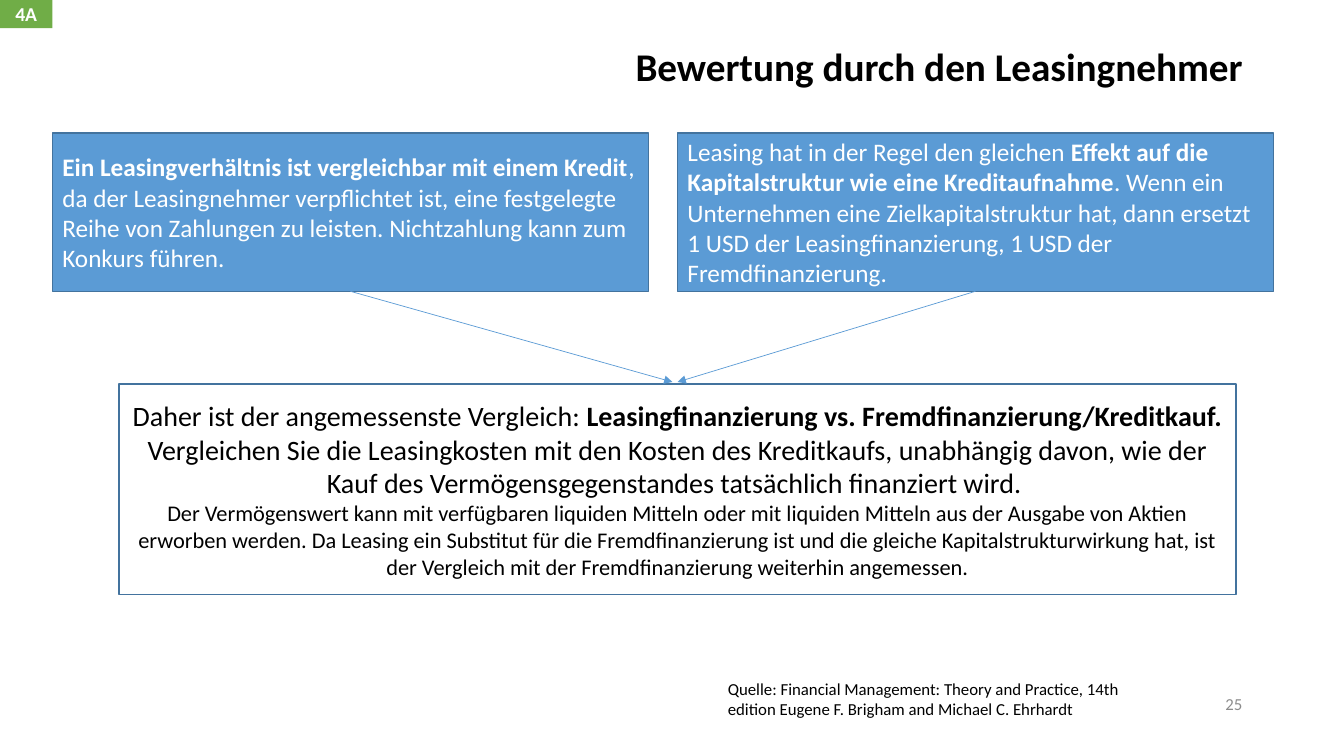
from lxml.etree import SubElement
from pptx import Presentation
from pptx.dml.color import RGBColor
from pptx.enum.shapes import MSO_CONNECTOR, MSO_SHAPE
from pptx.enum.text import MSO_ANCHOR, PP_ALIGN
from pptx.oxml.ns import qn
from pptx.util import Inches, Pt

BLACK = RGBColor(0x00, 0x00, 0x00)
WHITE = RGBColor(0xFF, 0xFF, 0xFF)
GRAY = RGBColor(0x8C, 0x8C, 0x8C)
GREEN = RGBColor(0x70, 0xAD, 0x47)
BLUE = RGBColor(0x5B, 0x9B, 0xD5)
DARK_BLUE = RGBColor(0x43, 0x73, 0x9E)

TITLE = [(28, [("Bewertung durch den Leasingnehmer", True)])]
CHAPTER = [(14, [("4A", True)])]
PAGE_NUMBER = [(12, [("25", False)])]
SOURCE = [(12, [("Quelle: Financial Management: Theory and Practice, 14th edition "
                 "Eugene F. Brigham and Michael C. Ehrhardt", False)])]
PREMISES = [
    [(18, [
        ("Ein Leasingverhältnis ist vergleichbar mit einem Kredit", True),
        (", da der Leasingnehmer verpflichtet ist, eine festgelegte Reihe von "
         "Zahlungen zu leisten. Nichtzahlung kann zum Konkurs führen.", False),
    ])],
    [(18, [
        ("Leasing hat in der Regel den gleichen ", False),
        ("Effekt auf die Kapitalstruktur wie eine Kreditaufnahme", True),
        (". Wenn ein Unternehmen eine Zielkapitalstruktur hat, dann ersetzt "
         "1 USD der Leasingfinanzierung, 1 USD der Fremdfinanzierung.", False),
    ])],
]
CONCLUSION = [
    (20, [
        ("Daher ist der angemessenste Vergleich: ", False),
        ("Leasingfinanzierung vs. Fremdfinanzierung/Kreditkauf. ", True),
        ("Vergleichen Sie die Leasingkosten mit den Kosten des Kreditkaufs, "
         "unabhängig davon, wie der Kauf des Vermögensgegenstandes tatsächlich "
         "finanziert wird. ", False),
    ]),
    (16, [
        ("Der Vermögenswert kann mit verfügbaren liquiden Mitteln oder mit liquiden "
         "Mitteln aus der Ausgabe von Aktien erworben werden. Da Leasing ein Substitut "
         "für die Fremdfinanzierung ist und die gleiche Kapitalstrukturwirkung hat, ist "
         "der Vergleich mit der Fremdfinanzierung weiterhin angemessen.", False),
    ]),
]

PREMISE_LEFT, PREMISE_TOP, PREMISE_WIDTH, PREMISE_HEIGHT = 0.52, 1.32, 5.91, 1.57
PREMISE_STEP = 6.2
ARROW_TIPS = [(6.67, 3.79), (6.72, 3.79)]


def write(target, paragraphs, color, align, anchor=MSO_ANCHOR.MIDDLE, spacing=1.0):
    frame = target.text_frame
    frame.word_wrap = True
    frame.vertical_anchor = anchor
    for index, (size, runs) in enumerate(paragraphs):
        paragraph = frame.add_paragraph() if index else frame.paragraphs[0]
        paragraph.alignment = align
        paragraph.line_spacing = spacing
        for words, bold in runs:
            run = paragraph.add_run()
            run.text = words
            run.font.color.rgb = color
            style = {"name": "Calibri", "size": Pt(size), "bold": bold}
            for attribute, value in style.items():
                setattr(run.font, attribute, value)


def add_label(slide, place, paragraphs, color, align, **layout):
    label = slide.shapes.add_textbox(*map(Inches, place))
    write(label, paragraphs, color, align, **layout)


def add_panel(slide, place, paragraphs, fill, border, color, align):
    panel = slide.shapes.add_shape(MSO_SHAPE.RECTANGLE, *map(Inches, place))
    panel.shadow.inherit = False
    panel.fill.solid()
    panel.fill.fore_color.rgb = fill
    if border is None:
        panel.line.fill.background()
    else:
        panel.line.color.rgb = border
        panel.line.width = Pt(1)
    write(panel, paragraphs, color, align)
    return panel


def add_arrow(slide, premise, tip):
    arrow = slide.shapes.add_connector(MSO_CONNECTOR.STRAIGHT, 0, 0, *map(Inches, tip))
    arrow.begin_connect(premise, 2)
    arrow.line.color.rgb = BLUE
    arrow.line.width = Pt(0.5)
    SubElement(arrow.line._get_or_add_ln(), qn("a:tailEnd"), type="triangle")
    SubElement(arrow._element.spPr, qn("a:effectLst"))


def main():
    deck = Presentation()
    deck.slide_width, deck.slide_height = Inches(13.33), Inches(7.5)
    slide = deck.slides.add_slide(deck.slide_layouts[6])

    add_label(slide, (0.92, 0.4, 11.5, 0.57), TITLE, BLACK, PP_ALIGN.RIGHT, spacing=0.9)
    add_panel(slide, (0, 0, 0.52, 0.28), CHAPTER, GREEN, None, WHITE, PP_ALIGN.CENTER)
    add_panel(slide, (1.18, 3.81, 11.08, 2.09), CONCLUSION,
              WHITE, DARK_BLUE, BLACK, PP_ALIGN.CENTER)

    for index, (premise_text, tip) in enumerate(zip(PREMISES, ARROW_TIPS)):
        place = (PREMISE_LEFT + index * PREMISE_STEP, PREMISE_TOP,
                 PREMISE_WIDTH, PREMISE_HEIGHT)
        premise = add_panel(slide, place, premise_text,
                            BLUE, DARK_BLUE, WHITE, PP_ALIGN.LEFT)
        add_arrow(slide, premise, tip)

    add_label(slide, (9.42, 6.78, 3, 0.4), PAGE_NUMBER, GRAY, PP_ALIGN.RIGHT)
    add_label(slide, (7.12, 6.68, 4.22, 0.5), SOURCE, BLACK, PP_ALIGN.LEFT,
              anchor=MSO_ANCHOR.TOP)
    deck.save("out.pptx")


if __name__ == "__main__":
    main()
